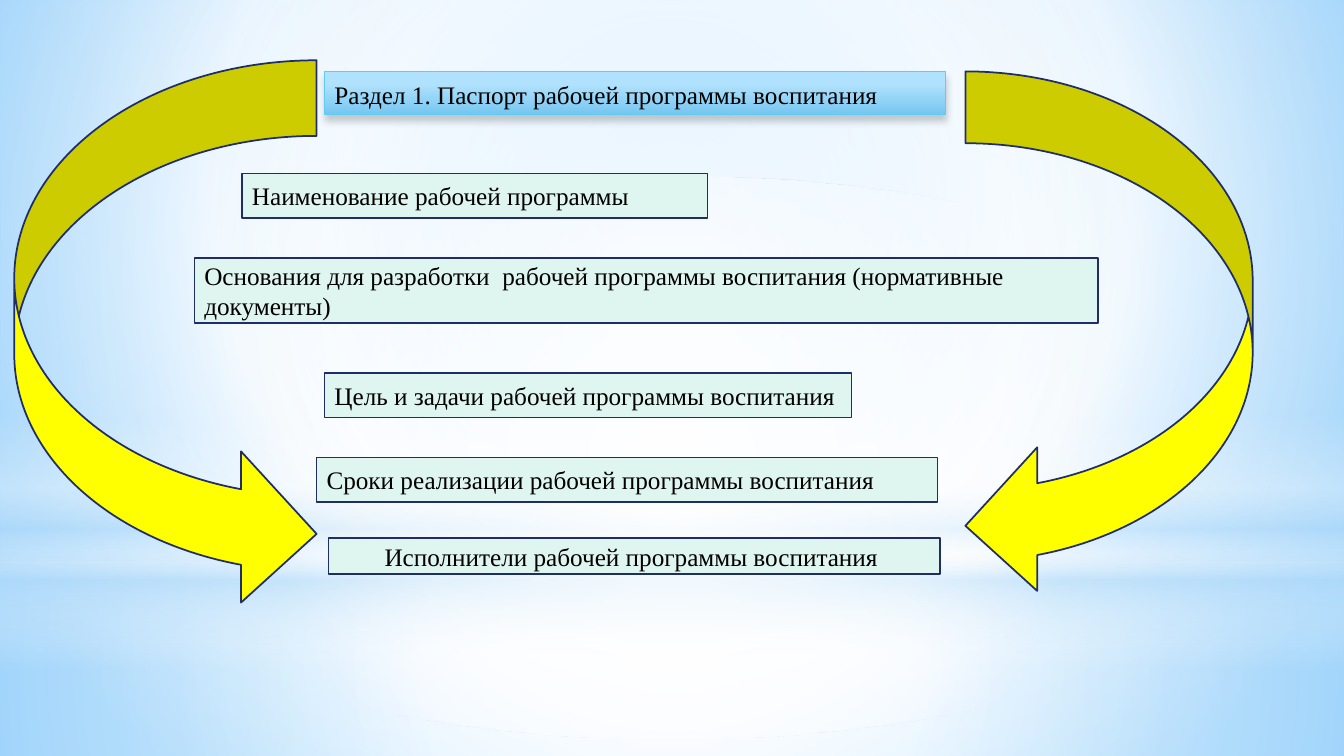
import pptx
import pptx.util
import pptx.dml.color
import pptx.enum.shapes
import pptx.enum.text
import pptx.oxml
import pptx.oxml.ns
import lxml.etree

Cm = pptx.util.Cm
Pt = pptx.util.Pt
Kind = pptx.enum.shapes.MSO_SHAPE
Align = pptx.enum.text.PP_ALIGN
WIDE, HIGH = 33.87, 19.05


def color(code):
    return pptx.dml.color.RGBColor.from_string(code)


def add(parent, tag, **attrs):
    node = lxml.etree.SubElement(parent, pptx.oxml.ns.qn(tag))
    for name, value in attrs.items():
        node.set(name, str(value))
    return node


def tint(parent, code, alpha):
    node = add(parent, "a:srgbClr", val=code)
    if alpha < 100:
        add(node, "a:alpha", val=alpha * 1000)


class Board:
    font = "Times New Roman"
    size = 18
    ink = "000000"
    edge = "1F2E69"
    mint = "DFF5EF"
    gold = "FFFF00"

    def __init__(self, slide):
        self.slide = slide

    def blend(self, fill, root, stops, focus=None):
        fill.gradient()
        grad = root.find(".//" + pptx.oxml.ns.qn("a:gradFill"))
        for child in list(grad):
            grad.remove(child)
        grad.set("rotWithShape", "1")
        group = add(grad, "a:gsLst")
        for place, code, alpha in stops:
            tint(add(group, "a:gs", pos=place * 1000), code, alpha)
        if focus:
            sides = {side: part * 1000 for side, part in zip("ltrb", focus)}
            add(add(grad, "a:path", path="circle"), "a:fillToRect", **sides)
        else:
            add(grad, "a:lin", ang=90 * 60000, scaled=0)

    def back(self, stops, focus):
        self.blend(self.slide.background.fill, self.slide.element, stops, focus)

    def shape(self, kind, box, fill=None, line=None, width=1.25):
        item = self.slide.shapes.add_shape(kind, *map(Cm, box))
        item.shadow.inherit = False
        if fill:
            item.fill.solid()
            item.fill.fore_color.rgb = color(fill)
        if line:
            item.line.color.rgb = color(line)
            item.line.width = Pt(width)
        else:
            item.line.fill.background()
        return item

    def layer(self, kind, top, height, stops, focus=None):
        item = self.shape(kind, (0, top, WIDE, height))
        self.blend(item.fill, item.element, stops, focus)

    def label(self, item, text, align=Align.LEFT):
        frame = item.text_frame
        frame.word_wrap = True
        frame.vertical_anchor = pptx.enum.text.MSO_ANCHOR.MIDDLE
        para = frame.paragraphs[0]
        para.text = text
        para.alignment = align
        para.font.name = self.font
        para.font.size = Pt(self.size)
        para.font.color.rgb = color(self.ink)
        return para

    def title(self, box, text):
        item = self.shape(Kind.RECTANGLE, box, line="5ECCF3", width=0.75)
        self.blend(item.fill, item.element, [(28, "B1E2FD", 100), (100, "76C6F1", 100)])
        effect = item.element.spPr.find(pptx.oxml.ns.qn("a:effectLst"))
        shade = add(effect, "a:outerShdw", blurRad=Pt(5), dist=Pt(4),
                    dir=90 * 60000, rotWithShape=0)
        tint(shade, "000000", 20)
        self.label(item, text).line_spacing = 1.07

    def card(self, box, text, align=Align.LEFT):
        self.label(self.shape(Kind.RECTANGLE, box, self.mint, self.edge), text, align)

    def arrow(self, kind, box):
        self.shape(kind, box, self.gold, self.edge)


def main():
    deck = pptx.Presentation()
    deck.slide_width, deck.slide_height = Cm(WIDE), Cm(HIGH)
    board = Board(deck.slides.add_slide(deck.slide_layouts[6]))

    center = (50, 50, 50, 50)
    board.back([(0, "9ED5FF", 100), (60, "FFFFFF", 100), (100, "5BB9FF", 100)],
               (20, 10, 20, 60))
    split = 14.17
    board.layer(Kind.RECTANGLE, split, HIGH - split,
                [(0, "FFFFFF", 91), (37, "FFFFFF", 76), (100, "B4DCFA", 79)], center)
    board.layer(Kind.RECTANGLE, 0, split,
                [(0, "FFFFFF", 89), (48, "FFFFFF", 62), (100, "B4DCFA", 79)], center)
    board.layer(Kind.RECTANGLE, 10.46, 6.35,
                [(0, "FFFFFF", 0), (29, "FFFFFF", 30), (45, "B4DCFA", 40),
                 (55, "FFFFFF", 26), (65, "B4DCFA", 60), (100, "FFFFFF", 0)])
    board.layer(Kind.OVAL, 4.45, split,
                [(0, "FFFFFF", 100), (56, "FFFFFF", 0)], center)

    board.title((8.18, 1.8, 15.65, 1.09),
                "Раздел 1. Паспорт рабочей программы воспитания")
    cards = [
        ((6.1, 4.37, 11.73, 1.12), "Наименование рабочей программы"),
        ((4.9, 6.5, 22.78, 1.65),
         "Основания для разработки  рабочей программы воспитания (нормативные документы)"),
        ((8.18, 9.4, 13.28, 1.12), "Цель и задачи рабочей программы воспитания"),
        ((7.98, 11.53, 15.65, 1.12), "Сроки реализации рабочей программы воспитания"),
    ]
    for box, text in cards:
        board.card(box, text)
    board.card((8.28, 13.56, 15.42, 0.91),
               "Исполнители рабочей программы воспитания ", Align.CENTER)

    board.arrow(Kind.CURVED_RIGHT_ARROW, (0.36, 1.52, 7.62, 13.84))
    board.arrow(Kind.CURVED_LEFT_ARROW, (24.33, 1.8, 7.24, 13.26))
    deck.save("out.pptx")


if __name__ == "__main__":
    main()
